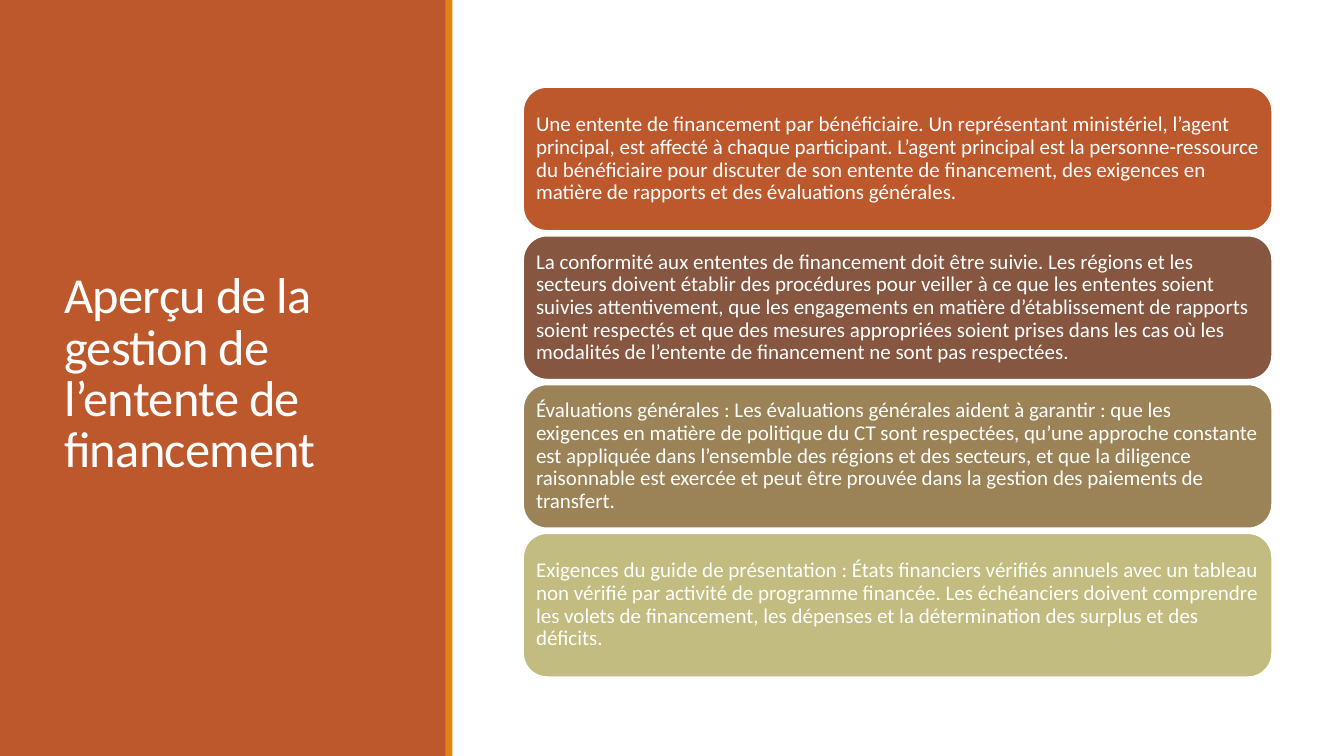
from dataclasses import dataclass

from pptx import Presentation
from pptx.dml.color import RGBColor
from pptx.enum.shapes import MSO_SHAPE
from pptx.enum.text import MSO_ANCHOR, PP_ALIGN
from pptx.util import Pt


@dataclass(frozen=True)
class Theme:
    font: str = "Calibri"
    white: str = "FFFFFF"
    rust: str = "BD582C"
    amber: str = "E48312"
    cards: tuple = ("BD582C", "865640", "9B8357", "C2BC80")
    title: int = 36
    body: int = 15


class Deck:
    def __init__(self, theme, slide):
        self.theme = theme
        self.slide = slide

    def shape(self, kind, box, fill):
        item = self.slide.shapes.add_shape(kind, *map(Pt, box))
        item.shadow.inherit = False
        item.fill.solid()
        item.fill.fore_color.rgb = RGBColor.from_string(fill)
        return item

    def bar(self, box, fill):
        self.shape(MSO_SHAPE.RECTANGLE, box, fill).line.fill.background()

    def label(self, frame, text, size, lead, after=0, track=0):
        frame.word_wrap = True
        frame.vertical_anchor = MSO_ANCHOR.MIDDLE
        para = frame.paragraphs[0]
        para.alignment = PP_ALIGN.LEFT
        para.line_spacing = lead
        para.space_after = Pt(after)
        run = para.add_run()
        run.text = text
        run.font.name = self.theme.font
        run.font.size = Pt(size)
        run.font.color.rgb = RGBColor.from_string(self.theme.white)
        if track:
            run._r.get_or_add_rPr().set("spc", str(track))

    def title(self, box, text):
        item = self.slide.shapes.add_textbox(*map(Pt, box))
        self.label(item.text_frame, text, self.theme.title, 0.85, track=-50)

    def card(self, box, fill, text):
        item = self.shape(MSO_SHAPE.ROUNDED_RECTANGLE, box, fill)
        item.line.color.rgb = RGBColor.from_string(self.theme.white)
        item.line.width = Pt(1.25)
        frame = item.text_frame
        frame.margin_left = frame.margin_right = Pt(4.2)
        frame.margin_top = frame.margin_bottom = Pt(4.2)
        self.label(frame, text, self.theme.body, 0.9, after=5.25)


TITLE = "Aperçu de la gestion de l’entente de financement"
POINTS = (
    "Une entente de financement par bénéficiaire. Un représentant ministériel, "
    "l’agent principal, est affecté à chaque participant. L’agent principal est "
    "la personne-ressource du bénéficiaire pour discuter de son entente de "
    "financement, des exigences en matière de rapports et des évaluations générales.",
    "La conformité aux ententes de financement doit être suivie. Les régions et "
    "les secteurs doivent établir des procédures pour veiller à ce que les ententes "
    "soient suivies attentivement, que les engagements en matière d’établissement "
    "de rapports soient respectés et que des mesures appropriées soient prises dans "
    "les cas où les modalités de l’entente de financement ne sont pas respectées.",
    "Évaluations générales : Les évaluations générales aident à garantir : que les "
    "exigences en matière de politique du CT sont respectées, qu’une approche "
    "constante est appliquée dans l’ensemble des régions et des secteurs, et que la "
    "diligence raisonnable est exercée et peut être prouvée dans la gestion des "
    "paiements de transfert.",
    "Exigences du guide de présentation : États financiers vérifiés annuels avec un "
    "tableau non vérifié par activité de programme financée. Les échéanciers doivent "
    "comprendre les volets de financement, les dépenses et la détermination des "
    "surplus et des déficits.",
)


def main():
    show = Presentation()
    show.slide_width, show.slide_height = Pt(960), Pt(540)
    theme = Theme()
    deck = Deck(theme, show.slides.add_slide(show.slide_layouts[6]))
    deck.bar((0, 0, 319, 540), theme.rust)
    deck.title((38.9, 41, 242.6, 454.3), TITLE)
    deck.bar((318.2, 0, 5, 540), theme.amber)
    top, step = 62.1, 106.25
    for row, (fill, text) in enumerate(zip(theme.cards, POINTS)):
        deck.card((373.7, top + row * step, 535, 102.8), fill, text)
    show.save("out.pptx")


if __name__ == "__main__":
    main()
